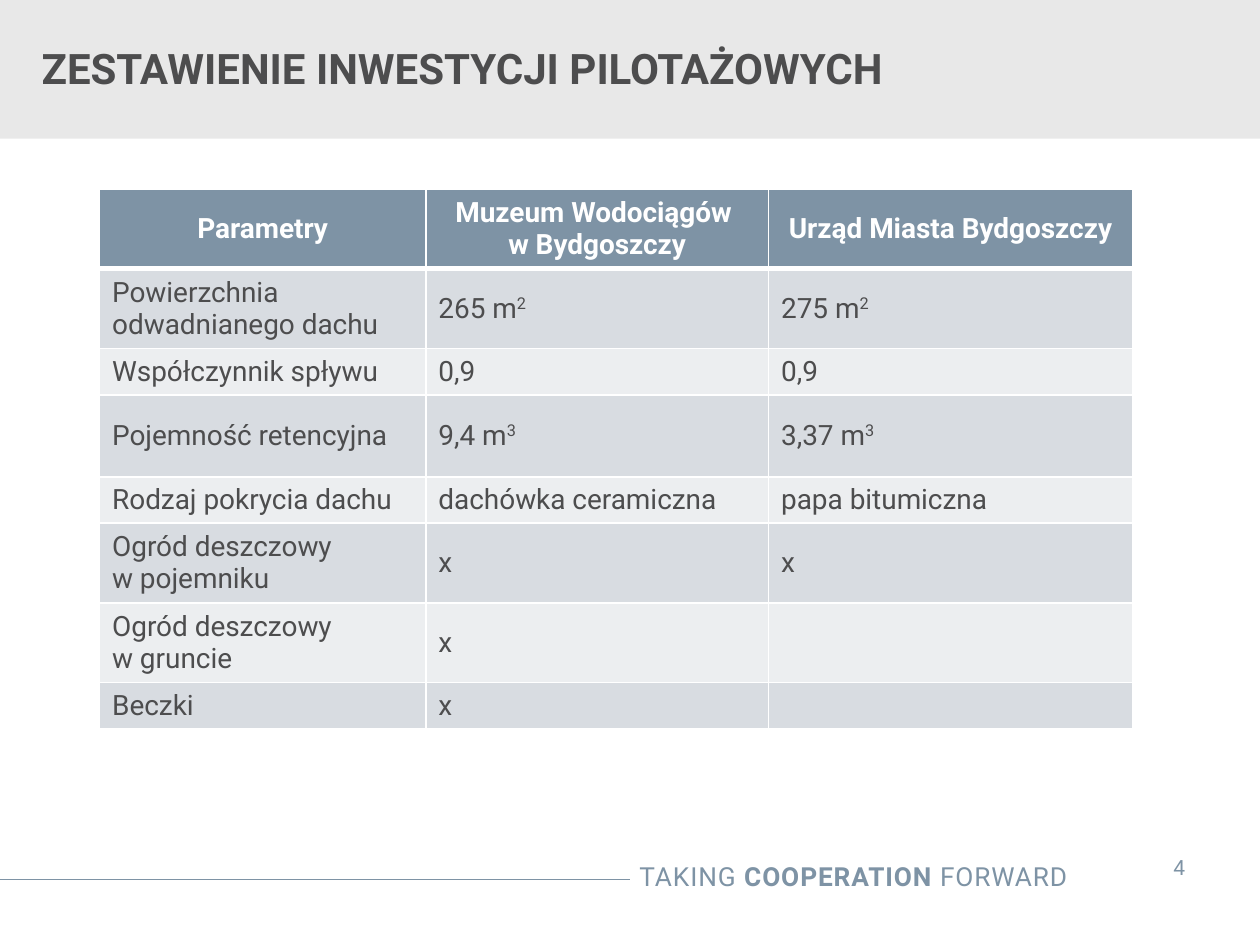
from lxml import etree
from pptx import Presentation
from pptx.dml.color import RGBColor
from pptx.enum.shapes import MSO_CONNECTOR, MSO_SHAPE
from pptx.enum.text import MSO_ANCHOR, PP_ALIGN
from pptx.oxml.ns import qn
from pptx.util import Inches, Pt

LEFT, CENTER, RIGHT = PP_ALIGN.LEFT, PP_ALIGN.CENTER, PP_ALIGN.RIGHT
TOP, MIDDLE = MSO_ANCHOR.TOP, MSO_ANCHOR.MIDDLE
FONT = "Roboto"
COLORS = {
    "accent": "7E93A5",
    "text": "4D4D4E",
    "banner": "E8E8E8",
    "band_dark": "D8DCE1",
    "band_light": "ECEEF0",
    "white": "FFFFFF",
}

presentation = Presentation()
presentation.slide_width, presentation.slide_height = Inches(10), Inches(7.5)
slide = presentation.slides.add_slide(presentation.slide_layouts[6])
shapes = slide.shapes


def area(*percents):
    """Turn percents of the slide (x, y, x, y ...) into lengths."""
    sides = (presentation.slide_width, presentation.slide_height)
    return [round(sides[i % 2] * value / 100) for i, value in enumerate(percents)]


def write(text_frame, pieces, size, color, align):
    """Fill the first paragraph with (text, bold, superscript) pieces."""
    paragraph = text_frame.paragraphs[0]
    paragraph.alignment = align
    for text, bold, superscript in pieces:
        first_new = len(paragraph.runs)
        lines = text.split("\n")
        for number, line in enumerate(lines):
            if number:
                paragraph.add_line_break()
            paragraph.add_run().text = line
        for run in paragraph.runs[first_new:]:
            run.font.name, run.font.size, run.font.bold = FONT, Pt(size), bold
            run.font.color.rgb = RGBColor.from_string(COLORS[color])
            if superscript:
                run.font._element.set("baseline", "30000")
    return paragraph


# Banner and footer line
banner = shapes.add_shape(MSO_SHAPE.RECTANGLE, *area(0, 0, 100, 14.67))
banner.shadow.inherit = False
banner.fill.solid()
banner.fill.fore_color.rgb = RGBColor.from_string(COLORS["banner"])
banner.line.fill.background()

footer_line = shapes.add_connector(MSO_CONNECTOR.STRAIGHT, *area(-0.1, 93.07, 50, 93.07))
footer_line.line.color.rgb = RGBColor.from_string(COLORS["accent"])
footer_line.line.width = Pt(0.75)
etree.SubElement(footer_line._element.spPr, qn("a:effectLst"))

# Title, motto and page number: place, pieces, size, color, alignment, anchor, side margin
motto = [("TAKING ", False, False), ("COOPERATION", True, False), (" FORWARD", False, False)]
title = [("ZESTAWIENIE INWESTYCJI PILOTAŻOWYCH", True, False)]
labels = [
    (area(-0.1, 2.13, 74.4, 10), title, 24, "text", LEFT, MIDDLE, 0.34),
    (area(38.8, 90.4, 46.9, 4.67), motto, 15, "accent", RIGHT, TOP, 0.1),
    (area(89.9, 89.73, 7.4, 5.33), [("4", False, False)], 12, "accent", CENTER, TOP, 0.2),
]
for place, pieces, size, color, align, anchor, margin in labels:
    text_frame = shapes.add_textbox(*place).text_frame
    text_frame.word_wrap = True
    text_frame.vertical_anchor = anchor
    text_frame.margin_left = Inches(margin)
    text_frame.margin_right = Inches(min(margin, 0.2))
    paragraph = write(text_frame, pieces, size, color, align)
    if pieces is motto:
        for run in paragraph.runs:
            run.font._element.set("spc", "50")

# Table of pilot investments; "^" comes before a superscript
rows = [
    ("Parametry", "Muzeum Wodociągów \nw Bydgoszczy", "Urząd Miasta Bydgoszczy"),
    ("Powierzchnia odwadnianego dachu", "265 m^2", "275 m^2"),
    ("Współczynnik spływu", "0,9", "0,9"),
    ("Pojemność retencyjna", "9,4 m^3", "3,37 m^3"),
    ("Rodzaj pokrycia dachu", "dachówka ceramiczna", "papa bitumiczna"),
    ("Ogród deszczowy \nw pojemniku", "x", "x"),
    ("Ogród deszczowy \nw gruncie", "x", ""),
    ("Beczki", "x", ""),
]
column_shares = [25.9, 27.2, 28.9]
one_line, two_lines, tall = 4.8, 8.2, 8.67
row_shares = [two_lines, two_lines, one_line, tall, one_line, two_lines, two_lines, one_line]

table_place = area(7.9, 20, sum(column_shares), sum(row_shares))
table = shapes.add_table(len(rows), len(column_shares), *table_place).table
for column, share in zip(table.columns, column_shares):
    column.width = area(share)[0]
for row, share in zip(table.rows, row_shares):
    row.height = area(0, share)[1]

for row_number, row in enumerate(rows):
    header = row_number == 0
    fill = "accent" if header else "band_dark" if row_number % 2 else "band_light"
    for column_number, text in enumerate(row):
        cell = table.cell(row_number, column_number)
        cell.vertical_anchor = MIDDLE
        base, _, exponent = text.partition("^")
        pieces = [(part, header, raised)
                  for part, raised in ((base, False), (exponent, True)) if part]
        paragraph = write(cell.text_frame, pieces, 16, "white" if header else "text",
                          CENTER if header else LEFT)
        if not pieces:
            etree.SubElement(paragraph._p, qn("a:endParaRPr"), sz="1600")

        properties = cell._tc.get_or_add_tcPr()
        for side in ("lnL", "lnR", "lnT", "lnB"):
            thick = (side == "lnB" and header) or (side == "lnT" and row_number == 1)
            border = etree.SubElement(properties, qn(f"a:{side}"), w=str(Pt(3 if thick else 1)))
            border_fill = etree.SubElement(border, qn("a:solidFill"))
            etree.SubElement(border_fill, qn("a:srgbClr"), val=COLORS["white"])
        cell.fill.solid()
        cell.fill.fore_color.rgb = RGBColor.from_string(COLORS[fill])

presentation.save("out.pptx")
